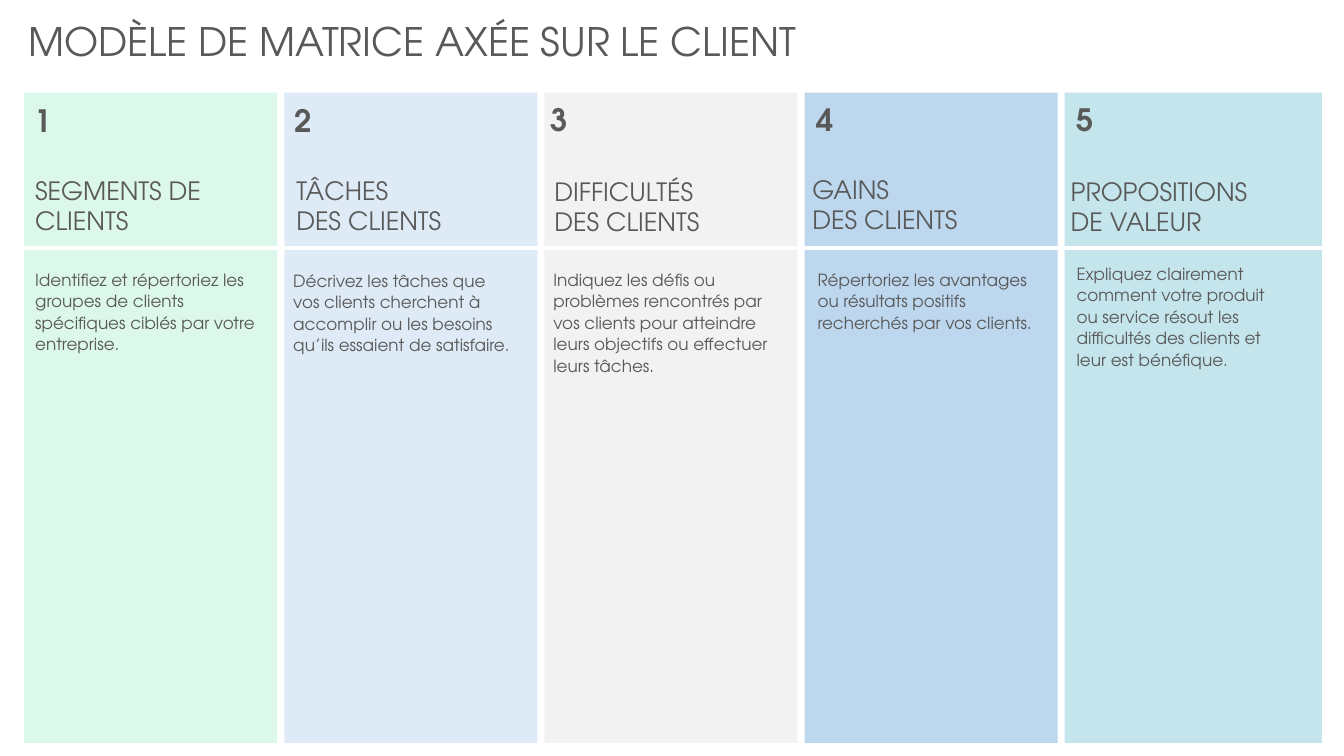
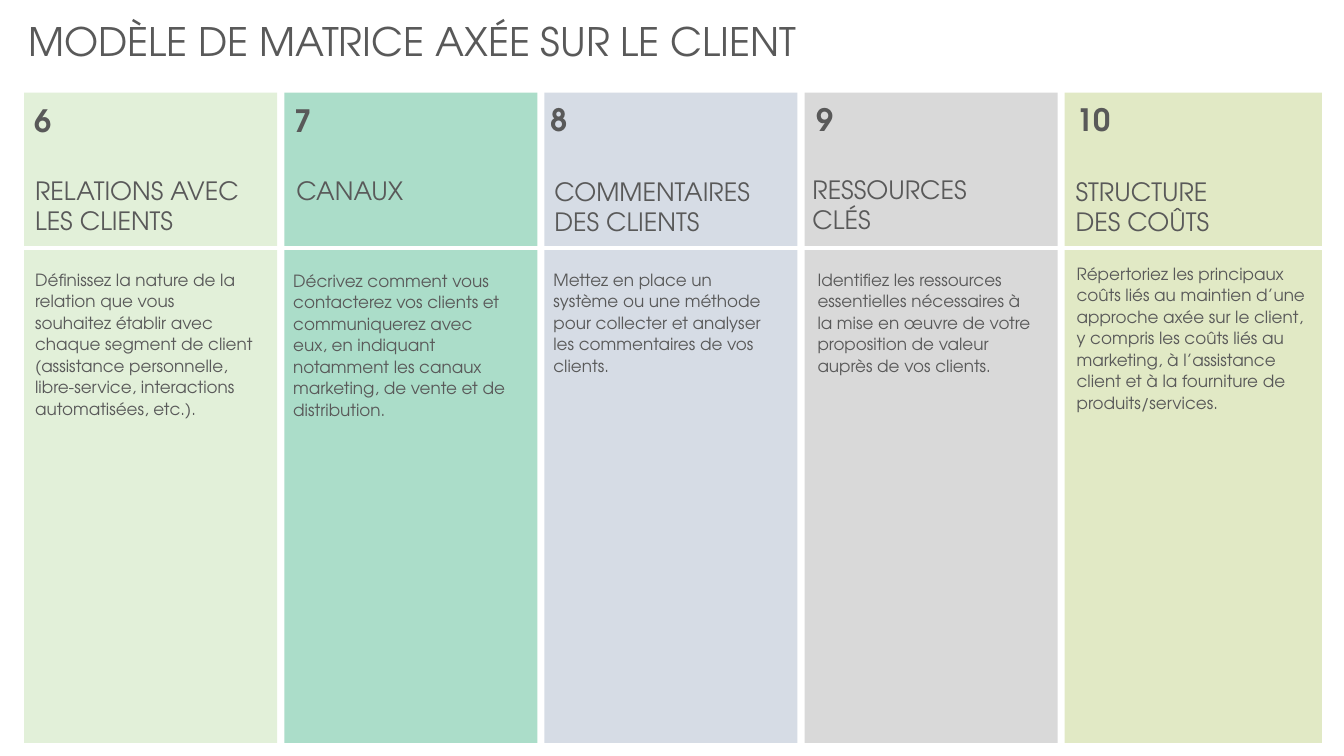
from dataclasses import dataclass

from lxml import etree
from pptx import Presentation
from pptx import util as u
from pptx.dml.color import RGBColor
from pptx.enum import shapes, text
from pptx.oxml.ns import qn


@dataclass(frozen=True)
class Theme:
    font: str = "TeX Gyre Adventor"
    ink: str = "595959"
    rule: str = "FFFFFF"
    title: int = 28
    number: int = 22
    head: int = 18
    body: int = 12


@dataclass(frozen=True)
class Card:
    fill: str
    head: str
    body: str
    wrap: float = 2.35  # width of the body text
    shift: float = 0    # extra indent of the heading


@dataclass(frozen=True)
class Nudge:
    """Fine offsets of a column's texts from its grid position."""
    number: tuple
    head: tuple
    body: tuple


THEME = Theme()
WIDE, HIGH = 13.33, 7.5
LEFT, TOP, PITCH = 0.24, 0.92, 2.58
PANEL_W, PANEL_H = 2.51, 6.45
HEAD_Y, RULE_Y, BODY_Y = 0.77, 2.46, 1.69
TITLE = "MODÈLE DE MATRICE AXÉE SUR LE CLIENT"

NUDGES = [
    Nudge((0, 0.01), (0.01, 0), (0.01, 0)),
    Nudge((0, 0.01), (0.02, 0), (-0.01, 0.01)),
    Nudge((-0.04, 0), (0, 0.01), (-0.01, 0)),
    Nudge((0.02, 0), (-0.02, -0.01), (0.03, 0)),
    Nudge((0.02, 0), (-0.04, 0.01), (0.02, -0.06)),
]

PAGES = [
    [
        Card("DCF8EB", "SEGMENTS DE CLIENTS",
             "Identifiez et répertoriez les groupes de clients spécifiques "
             "ciblés par votre entreprise.", wrap=2.38),
        Card("DEEBF7", "TÂCHES\vDES CLIENTS",
             "Décrivez les tâches que vos clients cherchent à accomplir ou "
             "les besoins qu’ils essaient de satisfaire."),
        Card("F2F2F2", "DIFFICULTÉS\vDES CLIENTS",
             "Indiquez les défis ou problèmes rencontrés par vos clients pour "
             "atteindre leurs objectifs ou effectuer leurs tâches."),
        Card("BDD7EE", "GAINS\vDES CLIENTS",
             "Répertoriez les avantages ou résultats positifs recherchés par "
             "vos clients."),
        Card("C5E5ED", "PROPOSITIONS\vDE VALEUR",
             "Expliquez clairement comment votre produit ou service résout "
             "les difficultés des clients et leur est bénéfique.", wrap=2.25),
    ],
    [
        Card("E2F0D9", "RELATIONS AVEC LES CLIENTS",
             "Définissez la nature de la relation que vous souhaitez établir "
             "avec chaque segment de client (assistance personnelle, "
             "libre-service, interactions automatisées, etc.).", wrap=2.38),
        Card("ABDDC9", "CANAUX",
             "Décrivez comment vous contacterez vos clients et communiquerez "
             "avec eux, en indiquant notamment les canaux marketing, de vente "
             "et de distribution."),
        Card("D6DCE5", "COMMENTAIRES\vDES CLIENTS",
             "Mettez en place un système ou une méthode pour collecter et "
             "analyser les commentaires de vos clients."),
        Card("D9D9D9", "RESSOURCES\vCLÉS",
             "Identifiez les ressources essentielles nécessaires à la mise en "
             "œuvre de votre proposition de valeur auprès de vos clients."),
        Card("E1E9C5", "STRUCTURE\vDES COÛTS",
             "Répertoriez les principaux coûts liés au maintien d’une approche "
             "axée sur le client, y compris les coûts liés au marketing, à "
             "l’assistance client et à la fourniture de produits/services.",
             wrap=2.5, shift=0.05),
    ],
]


def inches(*sizes):
    return [u.Inches(size) for size in sizes]


def write(shape, words, size, bold=False, prose=False):
    """Fill a text shape; prose has looser lines and space after."""
    frame = shape.text_frame
    frame.word_wrap = True
    frame.auto_size = text.MSO_AUTO_SIZE.NONE
    frame.vertical_anchor = text.MSO_ANCHOR.TOP
    frame.text = words
    para = frame.paragraphs[0]
    para.alignment = text.PP_ALIGN.LEFT
    if prose:
        para.line_spacing = 1.07
        para.space_after = u.Pt(8)
    para.font.name = THEME.font
    para.font.size = u.Pt(size)
    para.font.bold = bold
    para.font.color.rgb = RGBColor.from_string(THEME.ink)


def add_text(slide, box, words, size, **style):
    write(slide.shapes.add_textbox(*inches(*box)), words, size, **style)


def add_panel(slide, box, fill):
    panel = slide.shapes.add_shape(shapes.MSO_SHAPE.RECTANGLE, *inches(*box))
    panel.shadow.inherit = False
    panel.fill.solid()
    panel.fill.fore_color.rgb = RGBColor.from_string(fill)
    panel.line.fill.background()


def add_rule(slide, left, right, y):
    rule = slide.shapes.add_connector(
        shapes.MSO_CONNECTOR.STRAIGHT, *inches(left, y, right, y))
    rule.line.color.rgb = RGBColor.from_string(THEME.rule)
    rule.line.width = u.Pt(2.25)
    etree.SubElement(rule._element.spPr, qn("a:effectLst"))


def add_column(slide, box, number, card, nudge):
    x, y, width, _ = box
    add_panel(slide, box, card.fill)
    dx, dy = nudge.number
    add_text(slide, (x + dx, y + dy, 0.6, 0.64), str(number),
             THEME.number, bold=True, prose=True)
    dx, dy = nudge.head
    add_text(slide, (x + dx + card.shift, y + HEAD_Y + dy, width, 0.71),
             card.head, THEME.head)
    dx, dy = nudge.body
    add_text(slide, (x + dx, y + BODY_Y + dy, card.wrap, 1.85), card.body,
             THEME.body, prose=True)


def add_page(deck, cards, first):
    slide = deck.slides.add_slide(deck.slide_layouts[5])
    title = slide.shapes.title
    title.left, title.top, title.width, title.height = inches(
        0.18, 0.12, 12.95, 0.57)
    write(title, TITLE, THEME.title)
    for i, (card, nudge) in enumerate(zip(cards, NUDGES)):
        last = i == len(cards) - 1
        width = PANEL_W + (0.04 if last else 0)
        box = (LEFT + i * PITCH, TOP, width, PANEL_H)
        add_column(slide, box, first + i, card, nudge)
    add_rule(slide, LEFT, 13.2, RULE_Y)


def main():
    deck = Presentation()
    deck.slide_width, deck.slide_height = inches(WIDE, HIGH)
    first = 1
    for cards in PAGES:
        add_page(deck, cards, first)
        first += len(cards)
    deck.save("out.pptx")


if __name__ == "__main__":
    main()
